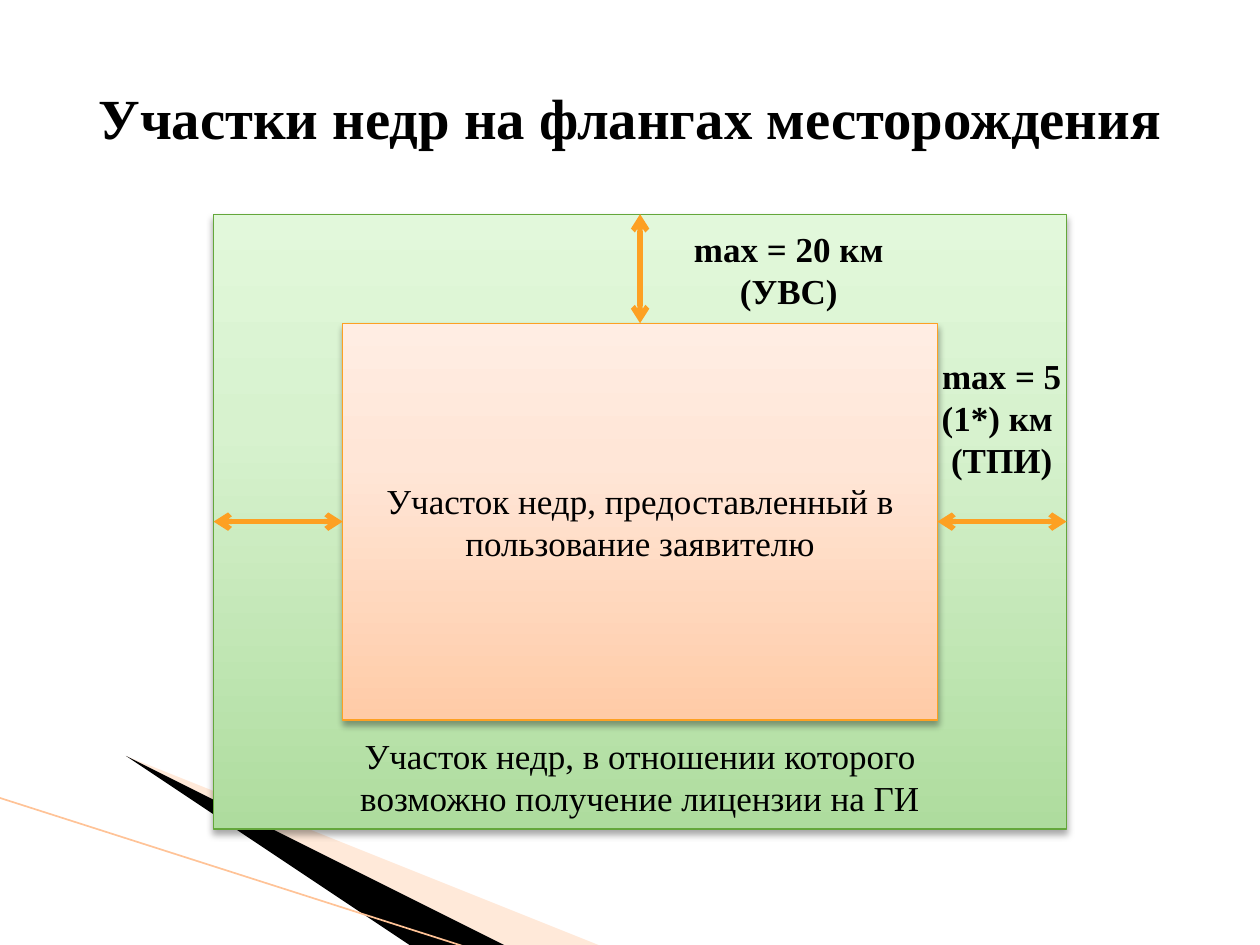
from dataclasses import dataclass

from lxml import etree
from pptx import Presentation
from pptx.dml.color import RGBColor
from pptx.enum.shapes import MSO_CONNECTOR as Connector, MSO_SHAPE as Preset
from pptx.enum.text import MSO_ANCHOR as Anchor, PP_ALIGN as Align
from pptx.oxml import parse_xml
from pptx.oxml.ns import nsdecls, qn
from pptx.util import Inches, Pt

WIDTH, HEIGHT = 10, 7.5
TOP, LEFT, RIGHT = 0, 1, 3  # connection sites of a rectangle


@dataclass(frozen=True)
class Theme:
    font: str = "Times New Roman"
    title_size: float = 32.4
    body_size: float = 20
    text: str = "000000"
    accent: str = "FDA023"
    outer_line: str = "64A73B"
    outer_stops: tuple = ((0, "AEDC9E"), (65, "D7F2CE"), (100, "E2F8DB"))
    inner_stops: tuple = ((0, "FFCBA7"), (65, "FFE6D7"), (100, "FFEDE3"))
    wedge_light: str = "FFC8A2"
    wedge_dark: str = "000000"
    wedge_edge: str = "FFC397"


THEME = Theme()


def centred_box(cx, cy, width, height):
    """Box in inches around a centre point."""
    return [Inches(v) for v in (cx - width / 2, cy - height / 2, width, height)]


def write(shape, lines, size=THEME.body_size, bold=False):
    frame = shape.text_frame
    frame.word_wrap = True
    frame.vertical_anchor = Anchor.MIDDLE
    frame.text = "\n".join(lines)
    for paragraph in frame.paragraphs:
        paragraph.alignment = Align.CENTER
        font = paragraph.font
        font.name, font.size, font.bold = THEME.font, Pt(size), bold
        font.color.rgb = RGBColor.from_string(THEME.text)


def add_label(slide, box, *lines, **style):
    write(slide.shapes.add_textbox(*box), lines, **style)


def set_line(line, color, width):
    line.color.rgb = RGBColor.from_string(color)
    line.width = Pt(width)


def add_area(slide, box, stops, outline):
    """Rectangle with an upward gradient and a soft shadow below."""
    area = slide.shapes.add_shape(Preset.RECTANGLE, *box)
    set_line(area.line, outline, 0.75)
    stop_xml = "".join(
        f'<a:gs pos="{pos * 1000}"><a:srgbClr val="{color}"/></a:gs>'
        for pos, color in stops)
    properties = area._element.spPr
    properties.find(qn("a:prstGeom")).addnext(parse_xml(
        f'<a:gradFill {nsdecls("a")} rotWithShape="1"><a:gsLst>{stop_xml}</a:gsLst>'
        '<a:lin ang="16200000" scaled="0"/></a:gradFill>'))
    properties.append(parse_xml(
        f'<a:effectLst {nsdecls("a")}><a:outerShdw blurRad="{Pt(4)}" dist="{Pt(3)}" '
        'dir="5400000" rotWithShape="0"><a:srgbClr val="000000">'
        '<a:alpha val="35000"/></a:srgbClr></a:outerShdw></a:effectLst>'))
    return area


def add_line(slide, start, end, color, width):
    points = [Inches(v) for v in (*start, *end)]
    line = slide.shapes.add_connector(Connector.STRAIGHT, *points)
    set_line(line.line, color, width)
    etree.SubElement(line._element.spPr, qn("a:effectLst"))
    return line


def add_distance(slide, inner, outer, side):
    """Double arrow between the same sides of the two areas."""
    arrow = add_line(slide, (0, 0), (1, 1), THEME.accent, 3)
    arrow.begin_connect(inner, side)
    arrow.end_connect(outer, side)
    for end in ("a:headEnd", "a:tailEnd"):
        etree.SubElement(arrow.line._get_or_add_ln(), qn(end), type="arrow")


def add_wedge(slide, points, color, opacity=100):
    builder = slide.shapes.build_freeform(*points[0], scale=Inches(1))
    builder.add_line_segments(points[1:], close=True)
    wedge = builder.convert_to_shape()
    wedge.shadow.inherit = False
    wedge.line.fill.background()
    wedge.fill.solid()
    wedge.fill.fore_color.rgb = RGBColor.from_string(color)
    if opacity < 100:
        tint = wedge._element.spPr.find(".//" + qn("a:srgbClr"))
        etree.SubElement(tint, qn("a:alpha"), val=str(opacity * 1000))


def main():
    deck = Presentation()
    deck.slide_width, deck.slide_height = Inches(WIDTH), Inches(HEIGHT)
    slide = deck.slides.add_slide(deck.slide_layouts[6])

    # Corner decoration
    add_wedge(slide, [(0.55, 6.5), (5.95, 7.51), (4.56, 7.51)],
              THEME.wedge_light, opacity=40)
    add_wedge(slide, [(0.53, 6.49), (4.57, 7.51), (3.72, 7.52)], THEME.wedge_dark)
    add_line(slide, (-0.01, 6.33), (3.71, 7.52), THEME.wedge_edge, 0.95)

    # Concentric areas
    cx, cy = 5.08, 4.14
    outer = add_area(slide, centred_box(cx, cy, 6.77, 4.88),
                     THEME.outer_stops, THEME.outer_line)
    inner = add_area(slide, centred_box(cx, cy, 4.72, 3.15),
                     THEME.inner_stops, THEME.accent)
    write(inner, ["Участок недр, предоставленный в пользование заявителю"])

    # Title
    add_label(slide, centred_box(WIDTH / 2, 0.925, WIDTH * 0.9, 1.25),
              "Участки недр на флангах месторождения",
              size=THEME.title_size, bold=True)

    # Distances between the areas
    for side in (LEFT, RIGHT, TOP):
        add_distance(slide, inner, outer, side)

    # Labels
    add_label(slide, centred_box(6.26, 2.14, 1.89, 0.39),
              "max = 20 км (УВС)", bold=True)
    add_label(slide, centred_box(cx, 6.16, 5.04, 0.71),
              "Участок недр, в отношении которого возможно получение лицензии на ГИ")
    add_label(slide, centred_box(7.95, 3.31, 1.18, 0.94),
              "max = 5 (1*) км ", "(ТПИ)", bold=True)

    deck.save("out.pptx")


if __name__ == "__main__":
    main()
